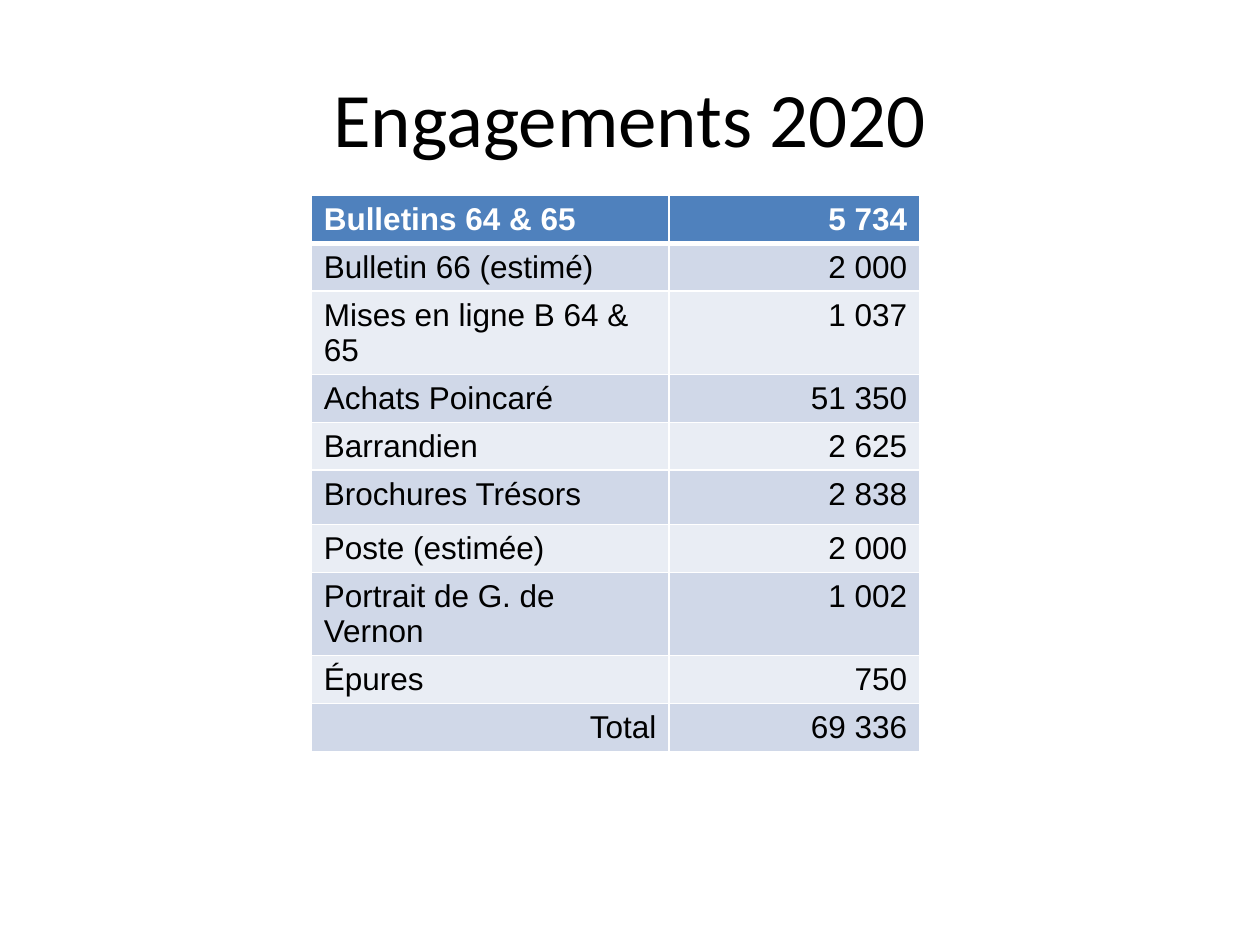
from lxml.etree import SubElement
from pptx import Presentation
from pptx.dml.color import RGBColor as Rgb
from pptx.enum.text import MSO_ANCHOR as Anchor, PP_ALIGN as Align
from pptx.oxml.ns import qn
from pptx.util import Inches, Pt

COLORS = {"text": "000000", "white": "FFFFFF", "header": "4F81BD",
          "odd": "D0D8E8", "even": "E9EDF4"}

rows = [
    ("Bulletins 64 & 65", "5 734"),
    ("Bulletin 66 (estimé)", "2 000"),
    ("Mises en ligne B 64 & 65", "1 037"),
    ("Achats Poincaré", "51 350"),
    ("Barrandien", "2 625"),
    ("Brochures Trésors", "2 838"),
    ("Poste (estimée)", "2 000"),
    ("Portrait de G. de Vernon", "1 002"),
    ("Épures", "750"),
    ("Total", "69 336"),
]


def write(frame, text, align, color, **font_values):
    para = frame.paragraphs[0]
    para.alignment = align
    span = para.add_run()
    span.text = text
    span.font.color.rgb = Rgb.from_string(COLORS[color])
    for name, value in font_values.items():
        setattr(span.font, name, value)


def add_border(cell, side, points):
    line = SubElement(cell._tc.get_or_add_tcPr(), qn(f"a:ln{side}"), w=str(Pt(points)))
    fill = SubElement(line, qn("a:solidFill"))
    SubElement(fill, qn("a:srgbClr"), val=COLORS["white"])


# Page
deck = Presentation()
deck.slide_width, deck.slide_height = Inches(10), Inches(7.5)
page = deck.slides.add_slide(deck.slide_layouts[5])

# Title: centred, with a margin of 5% of the page width
title = page.shapes.title
place = {"left": 0.05 * deck.slide_width, "top": 0.04 * deck.slide_height,
         "width": 0.9 * deck.slide_width, "height": deck.slide_height / 6}
for name, value in place.items():
    setattr(title, name, int(value))
title.text_frame.vertical_anchor = Anchor.MIDDLE
write(title.text_frame, "Engagements 2020", Align.CENTER, "text",
      size=Pt(44), name="Calibri")

# Table of commitments
column_widths = [2.84, 1.99]
row_heights = [0.43 if label == "Brochures Trésors" else 0.38 for label, _ in rows]
table = page.shapes.add_table(
    len(rows), len(column_widths), Inches(2.47), Inches(1.55),
    Inches(sum(column_widths)), Inches(sum(row_heights))).table
for column, width in zip(table.columns, column_widths):
    column.width = Inches(width)

for r, (values, height) in enumerate(zip(rows, row_heights)):
    table.rows[r].height = Inches(height)
    is_header = r == 0
    band = "header" if is_header else "odd" if r % 2 else "even"
    for c, value in enumerate(values):
        cell = table.cell(r, c)
        # White rules, thicker below the header
        for side in "LRTB":
            thick = (is_header and side == "B") or (r == 1 and side == "T")
            add_border(cell, side, 3 if thick else 1)
        cell.fill.solid()
        cell.fill.fore_color.rgb = Rgb.from_string(COLORS[band])
        # Amounts and the total label sit on the right
        align = Align.RIGHT if c or value == "Total" else Align.LEFT
        write(cell.text_frame, value, align, "white" if is_header else "text",
              size=Pt(18), name="Arial", bold=is_header)

deck.save("out.pptx")
